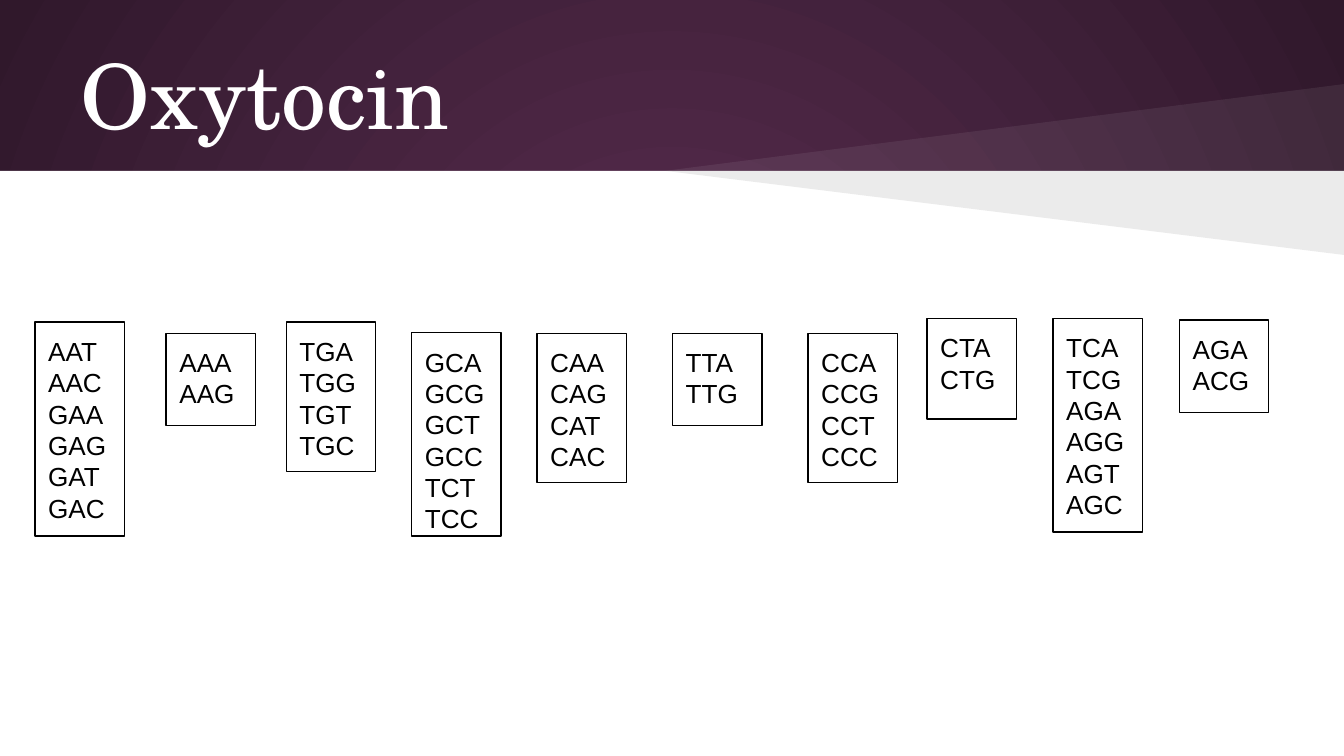
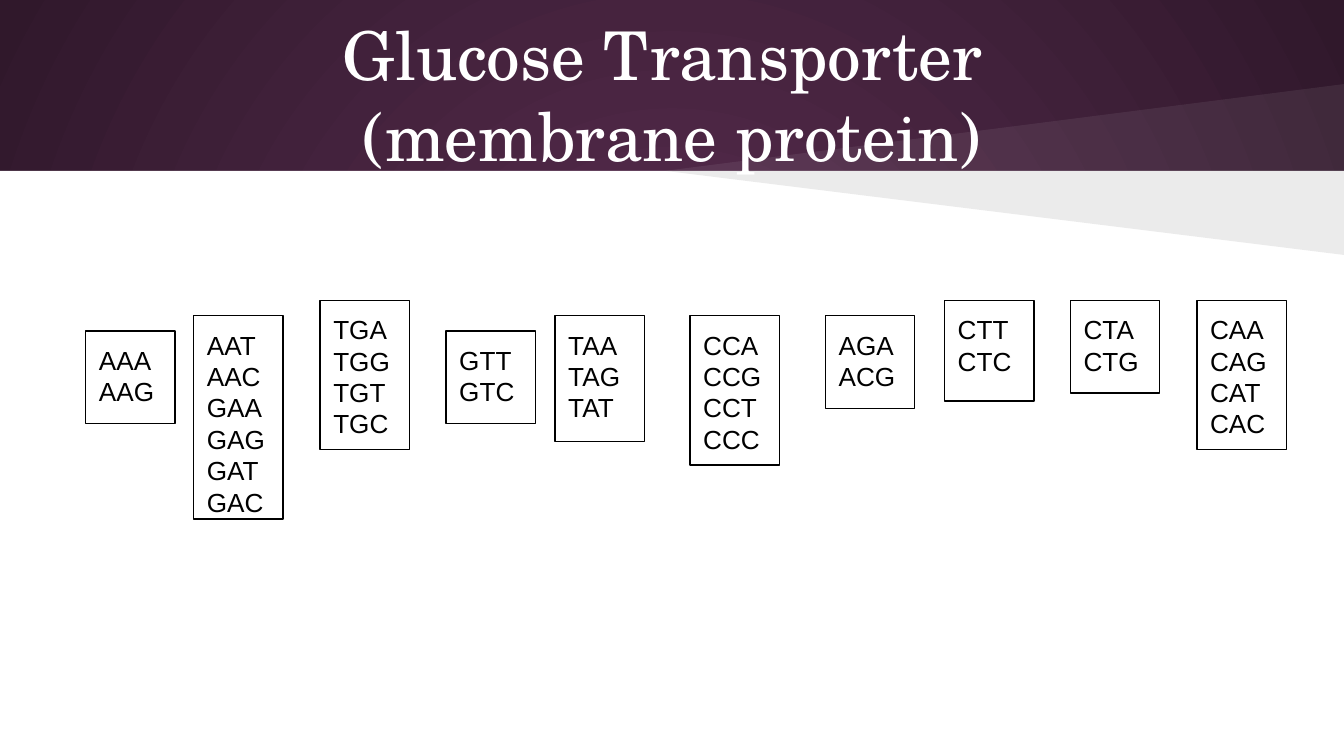
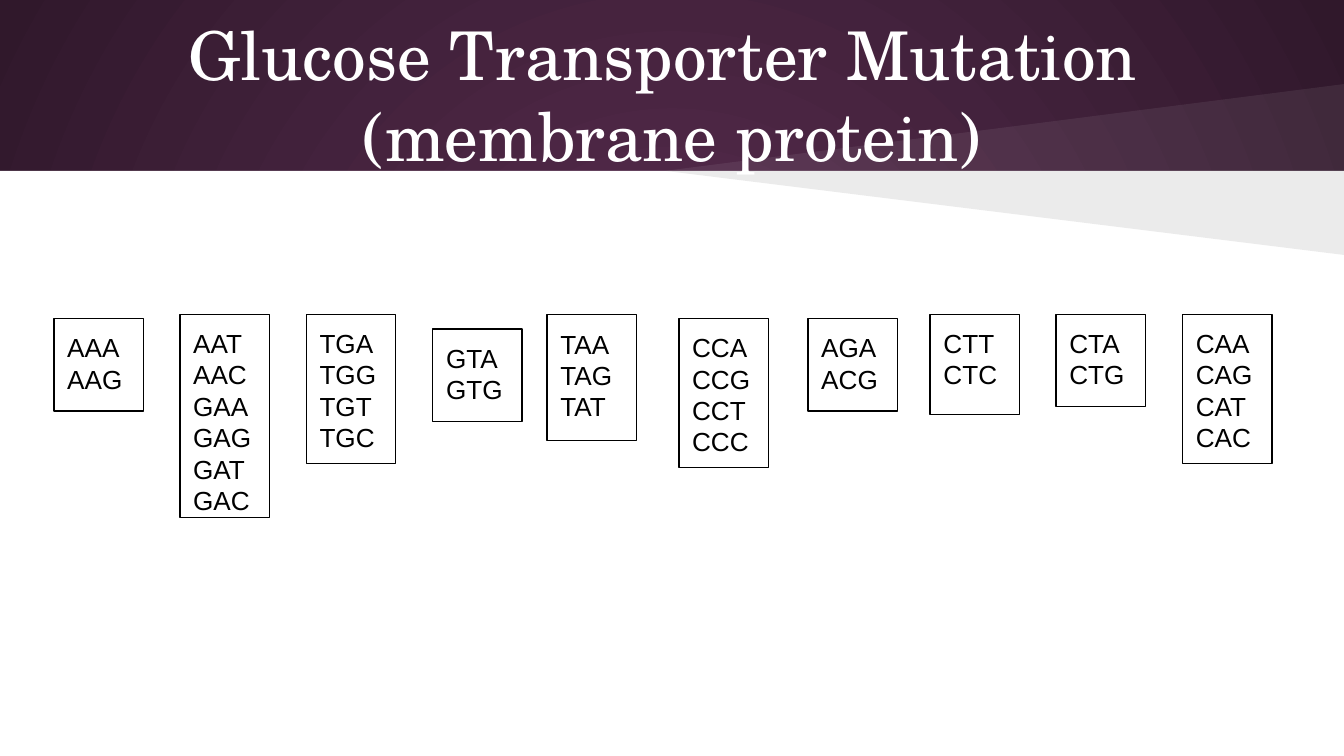
"""Build three titled slides of codon boxes."""
from dataclasses import dataclass

from lxml import etree
from pptx import Presentation
from pptx.dml.color import RGBColor
from pptx.enum import shapes, text
from pptx.oxml import ns
from pptx.util import Cm, Pt


@dataclass(frozen=True)
class Theme:
    glow: RGBColor = RGBColor(0x59, 0x2D, 0x50)
    edge: RGBColor = RGBColor(0x30, 0x18, 0x2B)
    white: RGBColor = RGBColor(0xFF, 0xFF, 0xFF)
    black: RGBColor = RGBColor(0x00, 0x00, 0x00)
    title_font: str = "TeX Gyre Schola"
    codon_font: str = "Arial"
    title_size: int = 48
    long_title_size: int = 36
    codon_size: int = 14
    outline: float = 0.75


@dataclass(frozen=True)
class Codons:
    left: float
    top: float
    names: str
    height: float = 0


@dataclass(frozen=True)
class CodonPage:
    title: str
    size: int
    align: text.PP_ALIGN
    boxes: tuple


THEME = Theme()
WIDTH, HEIGHT, BAND = 25.4, 14.29, 3.23
WEDGE_LEFT, WEDGE_TOP, WEDGE_BOTTOM = 12.57, 1.59, 4.82
BOX_WIDTH, INSET = 1.69, 0.25
BOX_HEIGHTS = {2: 1.75, 3: 2.38, 4: 2.82, 6: 3.84}
TALL_PAIR, TALL_SIX = 1.9, 4.04

FROM_AAA = "AAA AAG"
FROM_AAT = "AAT AAC GAA GAG GAT GAC"
FROM_TGA = "TGA TGG TGT TGC"
FROM_GCA = "GCA GCG GCT GCC TCT TCC"
FROM_CAA = "CAA CAG CAT CAC"
FROM_TTA = "TTA TTG"
FROM_CCA = "CCA CCG CCT CCC"
FROM_CTA = "CTA CTG"
FROM_TCA = "TCA TCG AGA AGG AGT AGC"
FROM_AGA = "AGA ACG"
FROM_GTT = "GTT GTC"
FROM_GTA = "GTA GTG"
FROM_TAA = "TAA TAG TAT"
FROM_CTT = "CTT CTC"

CODON_PAGES = (
    CodonPage("Oxytocin", THEME.title_size, text.PP_ALIGN.LEFT, (
        Codons(0.66, 6.09, FROM_AAT, TALL_SIX),
        Codons(3.14, 6.3, FROM_AAA),
        Codons(5.41, 6.09, FROM_TGA),
        Codons(7.78, 6.29, FROM_GCA),
        Codons(10.15, 6.3, FROM_CAA),
        Codons(12.71, 6.3, FROM_TTA),
        Codons(15.27, 6.3, FROM_CCA),
        Codons(17.52, 6.02, FROM_CTA, TALL_PAIR),
        Codons(19.9, 6.02, FROM_TCA, TALL_SIX),
        Codons(22.29, 6.05, FROM_AGA),
    )),
    CodonPage("Glucose Transporter \n(membrane protein)",
              THEME.long_title_size, text.PP_ALIGN.CENTER, (
        Codons(1.62, 6.26, FROM_AAA),
        Codons(3.66, 5.97, FROM_AAT),
        Codons(6.05, 5.68, FROM_TGA),
        Codons(8.43, 6.26, FROM_GTT),
        Codons(10.49, 5.97, FROM_TAA),
        Codons(13.04, 5.97, FROM_CCA),
        Codons(15.6, 5.97, FROM_AGA),
        Codons(17.85, 5.68, FROM_CTT, TALL_PAIR),
        Codons(20.23, 5.68, FROM_CTA),
        Codons(22.62, 5.68, FROM_CAA),
    )),
    CodonPage("Glucose Transporter Mutation \n(membrane protein)",
              THEME.long_title_size, text.PP_ALIGN.CENTER, (
        Codons(1.02, 6.02, FROM_AAA),
        Codons(3.4, 5.94, FROM_AAT),
        Codons(5.79, 5.94, FROM_TGA),
        Codons(8.18, 6.22, FROM_GTA),
        Codons(10.34, 5.95, FROM_TAA),
        Codons(12.83, 6.02, FROM_CCA),
        Codons(15.27, 6.02, FROM_AGA),
        Codons(17.58, 5.94, FROM_CTT, TALL_PAIR),
        Codons(19.96, 5.94, FROM_CTA),
        Codons(22.35, 5.94, FROM_CAA),
    )),
)


def place(shape, left: float, top: float, width: float, height: float) -> None:
    """Set a shape's position and size in centimetres."""
    shape.left, shape.top = Cm(left), Cm(top)
    shape.width, shape.height = Cm(width), Cm(height)


def write(shape, words: str, font: str, size: int, color: RGBColor,
          align: text.PP_ALIGN, anchor: text.MSO_ANCHOR) -> None:
    """Fill a shape with evenly formatted text."""
    frame = shape.text_frame
    frame.text = words
    frame.word_wrap = True
    frame.auto_size = text.MSO_AUTO_SIZE.NONE
    frame.vertical_anchor = anchor
    frame.margin_left = frame.margin_right = Cm(INSET)
    frame.margin_top = frame.margin_bottom = Cm(INSET)
    for para in frame.paragraphs:
        para.alignment = align
        for span in para.runs:
            span.font.name = font
            span.font.size = Pt(size)
            span.font.color.rgb = color


def paint(shape, color: RGBColor, opacity: int = 100) -> None:
    """Give a shape a plain fill without outline or shadow."""
    shape.shadow.inherit = False
    shape.fill.solid()
    shape.fill.fore_color.rgb = color
    shape.line.fill.background()
    if opacity < 100:
        tint = shape.element.spPr.find(".//" + ns.qn("a:srgbClr"))
        etree.SubElement(tint, ns.qn("a:alpha"), val=str(opacity * 1000))


def add_wedge(page, far_y: float, color: RGBColor, opacity: int):
    """Draw a translucent wedge from the band's lower edge to the right side."""
    builder = page.shapes.build_freeform(Cm(WEDGE_LEFT), Cm(BAND))
    builder.add_line_segments([(Cm(WIDTH), Cm(far_y)), (Cm(WIDTH), Cm(BAND))])
    wedge = builder.convert_to_shape()
    paint(wedge, color, opacity)
    return wedge


def style_layout(layout, page) -> None:
    """Set the radial background and move the shared shapes to the layout."""
    fill = layout.background.fill
    fill.gradient()
    for stop, color in zip(fill.gradient_stops, (THEME.glow, THEME.edge)):
        stop.color.rgb = color
    linear = layout.element.find(".//" + ns.qn("a:lin"))
    radial = etree.Element(ns.qn("a:path"))
    radial.set("path", "circle")
    etree.SubElement(radial, ns.qn("a:fillToRect"),
                     dict.fromkeys("ltrb", "50000"))
    linear.getparent().replace(linear, radial)

    panel = page.shapes.add_shape(
        shapes.MSO_SHAPE.RECTANGLE, 0, Cm(BAND), Cm(WIDTH), Cm(HEIGHT - BAND))
    paint(panel, THEME.white)
    light = add_wedge(page, WEDGE_TOP, THEME.white, 7)
    dark = add_wedge(page, WEDGE_BOTTOM, THEME.black, 8)
    tree = layout.element.cSld.spTree
    for index, shape in enumerate((panel, light, dark), start=2):
        tree.insert(index, shape.element)


def add_codons(page, codons: Codons) -> None:
    """Draw one outlined box listing its codons."""
    names = codons.names.split()
    height = codons.height or BOX_HEIGHTS[len(names)]
    box = page.shapes.add_shape(
        shapes.MSO_SHAPE.RECTANGLE, Cm(codons.left), Cm(codons.top),
        Cm(BOX_WIDTH), Cm(height))
    box.shadow.inherit = False
    box.fill.background()
    box.line.color.rgb = THEME.black
    box.line.width = Pt(THEME.outline)
    write(box, "\n".join(names), THEME.codon_font, THEME.codon_size,
          THEME.black, text.PP_ALIGN.LEFT, text.MSO_ANCHOR.TOP)


def fill_page(page, content: CodonPage) -> None:
    """Write the title and draw the codon boxes of one page."""
    title = page.shapes.title
    place(title, 1.27, 0.58, 22.86, 2.39)
    write(title, content.title, THEME.title_font, content.size, THEME.white,
          content.align, text.MSO_ANCHOR.MIDDLE)
    for codons in content.boxes:
        add_codons(page, codons)


def main() -> None:
    """Build and save the deck."""
    deck = Presentation()
    deck.slide_width, deck.slide_height = Cm(WIDTH), Cm(HEIGHT)
    layout = deck.slide_layouts[5]
    pages = [deck.slides.add_slide(layout) for _ in CODON_PAGES]
    style_layout(layout, pages[0])
    for page, content in zip(pages, CODON_PAGES):
        fill_page(page, content)
    deck.save("out.pptx")


if __name__ == "__main__":
    main()
